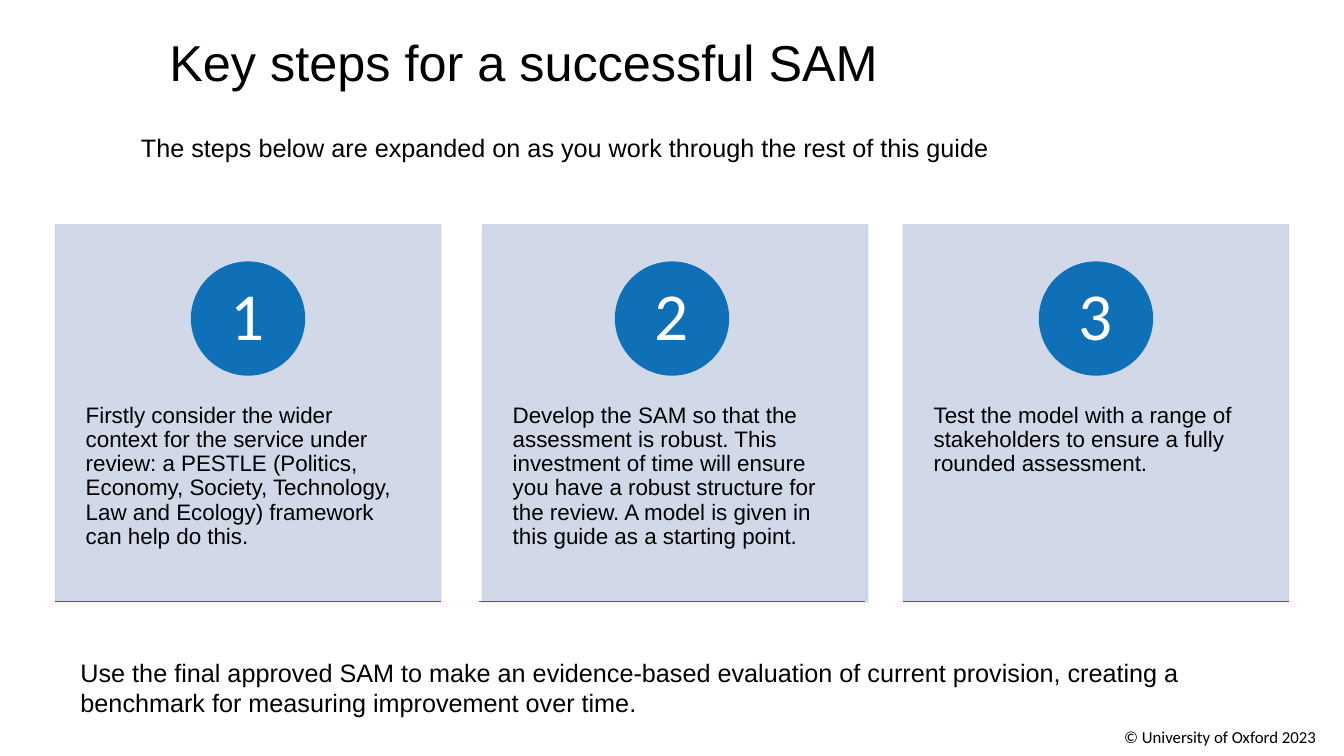
import pptx
import pptx.dml.color
import pptx.enum.shapes
import pptx.enum.text
import pptx.oxml
import pptx.oxml.ns
import pptx.util
import lxml.etree

Inches = pptx.util.Inches
ALIGN = pptx.enum.text.PP_ALIGN
ANCHOR = pptx.enum.text.MSO_ANCHOR
SHAPE = pptx.enum.shapes.MSO_SHAPE

STEPS = [
    ("Firstly consider the wider context for the service under review: a PESTLE "
     "(Politics, Economy, Society, Technology, Law and Ecology) framework can help do this.", 0),
    ("Develop the SAM so that the assessment is robust. This investment of time will ensure "
     "you have a robust structure for the review. A model is given in this guide as a "
     "starting point.", 0.03),
    ("Test the model with a range of stakeholders to ensure a fully rounded assessment.", 0),
]
FIRST_LEFT, LAST_LEFT = 0.55, 8.96
CARD_TOP, CARD_WIDTH, CARD_HEIGHT = 2.23, 3.82, 3.74
CIRCLE_SIZE = 1.12


def color(value):
    return pptx.dml.color.RGBColor.from_string(value)


def apply(target, values):
    for name, value in values.items():
        setattr(target, name, value)


class SlideBuilder:
    BLUE, CARD, BLACK, WHITE = "0F70B7", "CCD5E6", "000000", "FFFFFF"
    BODY_FONT, NUMBER_FONT = "Arial", "Calibri"

    def __init__(self, presentation):
        self.slide = presentation.slides.add_slide(presentation.slide_layouts[5])

    def fill_text(self, shape, text, size, font=BODY_FONT, ink=BLACK, align=ALIGN.LEFT,
                  anchor=ANCHOR.TOP, spacing=1.0, margins=(0.1, 0.05), wrap=True):
        side, end = (Inches(margin) for margin in margins)
        frame = shape.text_frame
        apply(frame, {
            "text": text, "word_wrap": wrap, "vertical_anchor": anchor,
            "auto_size": pptx.enum.text.MSO_AUTO_SIZE.NONE,
            "margin_left": side, "margin_right": side,
            "margin_top": end, "margin_bottom": end,
        })
        paragraph = frame.paragraphs[0]
        apply(paragraph, {"alignment": align, "line_spacing": spacing,
                          "space_before": pptx.util.Pt(0)})
        run_font = paragraph.runs[0].font
        apply(run_font, {"size": pptx.util.Pt(size), "name": font})
        run_font.color.rgb = color(ink)

    def title(self, text, left, top, width, height, size):
        shape = self.slide.shapes.title
        apply(shape, {"left": Inches(left), "top": Inches(top),
                      "width": Inches(width), "height": Inches(height)})
        self.fill_text(shape, text, size)

    def text(self, text, left, top, width, height, size, **style):
        box = self.slide.shapes.add_textbox(
            Inches(left), Inches(top), Inches(width), Inches(height))
        self.fill_text(box, text, size, **style)

    def shape(self, kind, left, top, width, height, fill, opacity=100):
        shape = self.slide.shapes.add_shape(
            kind, Inches(left), Inches(top), Inches(width), Inches(height))
        shape.shadow.inherit = False
        shape.line.width = pptx.util.Pt(1)
        for paint in (shape.fill, shape.line.fill):
            paint.solid()
            paint.fore_color.rgb = color(fill)
        if opacity < 100:
            for node in shape.element.spPr.iter(pptx.oxml.ns.qn("a:srgbClr")):
                alpha = lxml.etree.SubElement(node, pptx.oxml.ns.qn("a:alpha"))
                alpha.set("val", str(opacity * 1000))
        return shape

    def rule(self, left, top, width):
        line = self.slide.shapes.add_connector(
            pptx.enum.shapes.MSO_CONNECTOR.STRAIGHT,
            Inches(left), Inches(top), Inches(left + width), Inches(top))
        line.line.width = pptx.util.Pt(1)
        line.line.color.rgb = color(self.BLUE)
        lxml.etree.SubElement(line.element.spPr, pptx.oxml.ns.qn("a:effectLst"))

    def step(self, number, text, left, nudge):
        card_left = left + nudge
        self.shape(SHAPE.RECTANGLE, card_left, CARD_TOP, CARD_WIDTH, CARD_HEIGHT,
                   self.CARD, opacity=90)
        self.text(text, card_left, 3.65, CARD_WIDTH, 2.24, 16,
                  spacing=0.9, margins=(0.3, 0.36))
        circle = self.shape(SHAPE.OVAL, left + (CARD_WIDTH - CIRCLE_SIZE) / 2, 2.6,
                            CIRCLE_SIZE, CIRCLE_SIZE, self.BLUE)
        self.fill_text(circle, str(number), 48, font=self.NUMBER_FONT, ink=self.WHITE,
                       align=ALIGN.CENTER, anchor=ANCHOR.MIDDLE, spacing=0.9,
                       margins=(0.09, 0.01), wrap=False)
        self.rule(left, CARD_TOP + CARD_HEIGHT, CARD_WIDTH)


def main():
    presentation = pptx.Presentation()
    apply(presentation, {"slide_width": Inches(13.33), "slide_height": Inches(7.5)})
    builder = SlideBuilder(presentation)
    builder.title("Key steps for a successful SAM", 1.58, 0.26, 9, 0.71, 36)
    builder.text("The steps below are expanded on as you work through the rest of this guide",
                 1.3, 1.26, 10.58, 0.4, 18, anchor=ANCHOR.MIDDLE)
    pitch = (LAST_LEFT - FIRST_LEFT) / (len(STEPS) - 1)
    for index, (text, nudge) in enumerate(STEPS):
        builder.step(index + 1, text, FIRST_LEFT + index * pitch, nudge)
    builder.text("Use the final approved SAM to make an evidence-based evaluation of current "
                 "provision, creating a benchmark for measuring improvement over time.",
                 0.7, 6.47, 11.84, 0.71, 18)
    builder.text("© University of Oxford 2023", 11.05, 7.16, 2.29, 0.3, 12,
                 font=builder.NUMBER_FONT, wrap=False)
    presentation.save("out.pptx")


if __name__ == "__main__":
    main()
